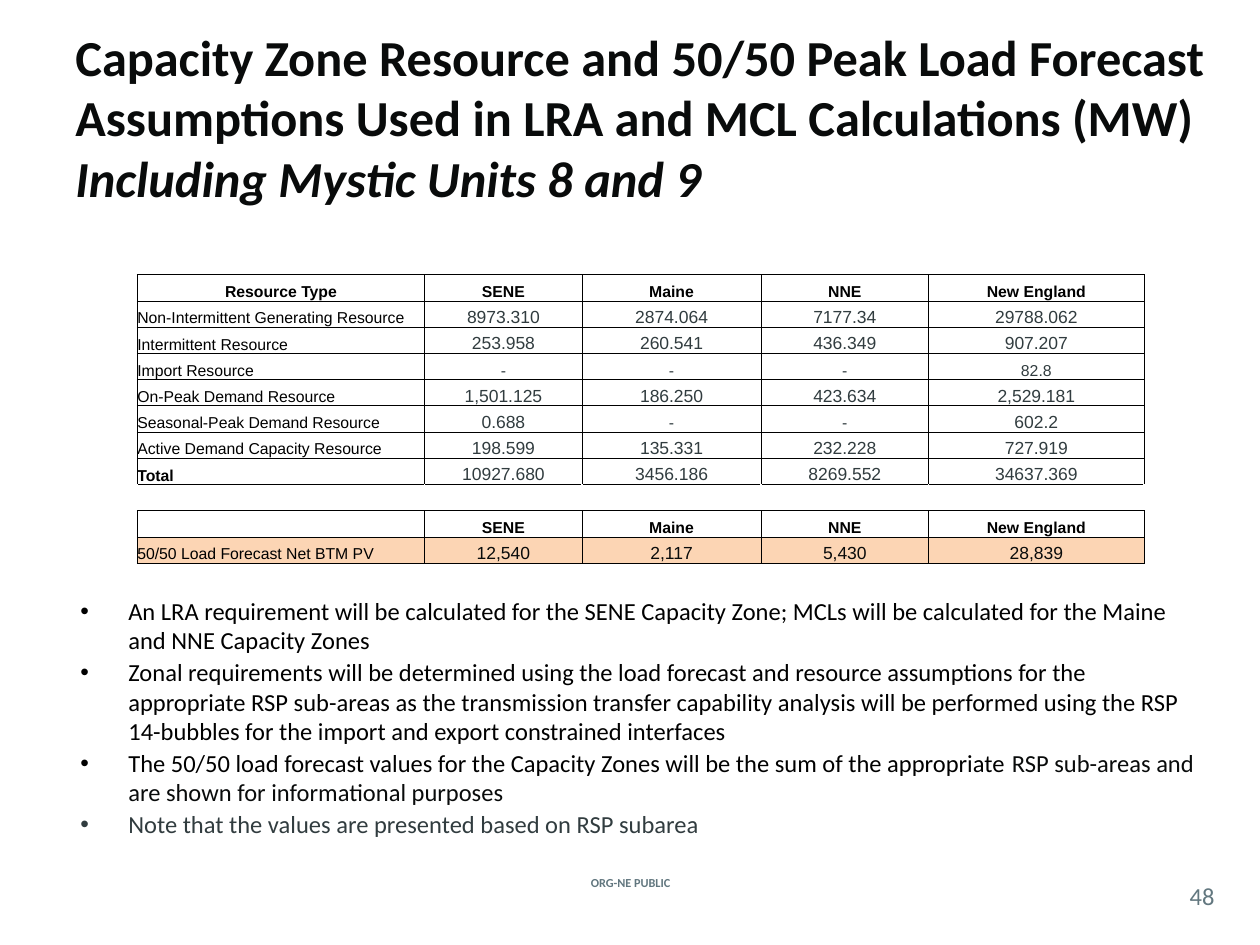
"""Build the capacity zone resource and load forecast slide."""
import pptx
import pptx.dml.color
import pptx.enum.text
import pptx.oxml.ns
import pptx.util
from lxml import etree

Pt = pptx.util.Pt
ALIGN = pptx.enum.text.PP_ALIGN
ANCHOR = pptx.enum.text.MSO_ANCHOR
COLORS = {"black": "000000", "ink": "090B0B", "slate": "313C3F",
          "footer": "62777F", "peach": "FCD5B4"}
ZERO_INSETS = {"margin_left": 0, "margin_right": 0, "margin_top": 0, "margin_bottom": 0}
COLUMN_WIDTHS = [164.16, 90, 102.24, 95.76, 123.12]
ROW_HEIGHT = 15
INDENT = 27.36
ZONES = ["SENE", "Maine", "NNE", "New England"]
ROWS = [
    ["Resource Type", *ZONES],
    ["Non-Intermittent Generating Resource", "8973.310", "2874.064", "7177.34", "29788.062"],
    ["Intermittent Resource", "253.958", "260.541", "436.349", "907.207"],
    ["Import Resource", "-", "-", "-", "82.8"],
    ["On-Peak Demand Resource", "1,501.125", "186.250", "423.634", "2,529.181"],
    ["Seasonal-Peak Demand Resource", "0.688", "-", "-", "602.2"],
    ["Active Demand Capacity Resource", "198.599", "135.331", "232.228", "727.919"],
    ["Total", "10927.680", "3456.186", "8269.552", "34637.369"],
    [""] * 5,
    ["", *ZONES],
    ["50/50 Load Forecast Net BTM PV", "12,540", "2,117", "5,430", "28,839"],
]
HEADER_ROWS, SPACER_ROW, FORECAST_ROW = (0, 9), 8, 10
REQUIREMENTS = [
    [("An LRA requirement will be calculated for the SENE Capacity Zone; MCLs will be "
      "calculated for the Maine and NNE Capacity Zones", "black")],
    [("Zonal requirements will be determined using the load forecast and resource "
      "assumptions for the appropriate RSP sub-areas as the transmission transfer "
      "capability analysis will be performed using the RSP 14-bubbles for the import "
      "and export constrained interfaces", "black")],
    [("The 50/50 load forecast values for the Capacity Zones will be the sum of the "
      "appropriate ", "black"),
     ("RSP sub-areas and are shown for informational purposes", "ink")],
    [("Note that the values are presented based on RSP subarea", "slate")],
]


def apply_format(target, formats):
    """Set every named attribute on the target."""
    for name, value in formats.items():
        setattr(target, name, value)


def add_element(parent, tag, **attributes):
    """Append a drawing element to an XML parent."""
    return etree.SubElement(parent, pptx.oxml.ns.qn(tag), attributes)


def add_run(paragraph, text, size, color, **formats):
    """Append a run with its font settings."""
    run = paragraph.add_run()
    run.text = text
    apply_format(run.font, {"name": "Calibri", "size": Pt(size), **formats})
    run.font.color.rgb = pptx.dml.color.RGBColor.from_string(COLORS[color])


def add_text_frame(slide, left, top, width, height, **formats):
    """Add a wrapping text box and return its frame."""
    frame = slide.shapes.add_textbox(Pt(left), Pt(top), Pt(width), Pt(height)).text_frame
    apply_format(frame, {"word_wrap": True, **formats})
    return frame


def add_title(slide):
    """Add the bold title with its italic last line."""
    frame = add_text_frame(slide, 36, 21.6, 660.24, 90, vertical_anchor=ANCHOR.MIDDLE)
    title = frame.paragraphs[0]
    add_run(title, "Capacity Zone Resource and 50/50 Peak Load Forecast Assumptions "
            "Used in LRA and MCL Calculations (MW)", 28.8, "ink", bold=True)
    title.add_line_break()
    add_run(title, "Including Mystic Units 8 and 9", 28.8, "ink", bold=True, italic=True)


def add_label(slide, box, text, size, **formats):
    """Add a centred footer label."""
    frame = add_text_frame(slide, *box, vertical_anchor=ANCHOR.MIDDLE, **ZERO_INSETS)
    frame.paragraphs[0].alignment = ALIGN.CENTER
    add_run(frame.paragraphs[0], text, size, "footer", **formats)


def add_requirements(slide):
    """Add the bulleted notes on the zonal requirements."""
    frame = add_text_frame(slide, 38.88, 336.96, 653.76, 159.84)
    for index, parts in enumerate(REQUIREMENTS):
        requirement = frame.add_paragraph() if index else frame.paragraphs[0]
        if index:
            requirement.space_before = Pt(1.4)
        properties = requirement._p.get_or_add_pPr()
        properties.set("marL", str(Pt(INDENT)))
        properties.set("indent", str(-Pt(INDENT)))
        add_element(properties, "a:buFont", typeface="Arial")
        add_element(properties, "a:buChar", char="•")
        for text, color in parts:
            add_run(requirement, text, 14, color)


def add_borders(cell, sides):
    """Draw thin black borders on the given sides of a cell."""
    properties = cell._tc.get_or_add_tcPr()
    for side in sides:
        line = add_element(properties, f"a:ln{side}", w=str(Pt(0.5)))
        add_element(add_element(line, "a:solidFill"), "a:srgbClr", val=COLORS["black"])


def cell_style(row, column):
    """Return the size, colour and weight of a table cell."""
    if row in HEADER_ROWS or column == 0:
        return 9, "black", row in HEADER_ROWS or ROWS[row][0] == "Total"
    small = ROWS[row][column] == "-" or ROWS[row][0] == "Import Resource"
    return 9 if small else 10, "ink" if row == FORECAST_ROW else "slate", False


def fill_cell(cell, row, column):
    """Write and format one table cell."""
    apply_format(cell, {"vertical_anchor": ANCHOR.BOTTOM, **ZERO_INSETS})
    add_borders(cell, "TB" if row == SPACER_ROW else "LRTB")
    if row == FORECAST_ROW:
        cell.fill.solid()
        cell.fill.fore_color.rgb = pptx.dml.color.RGBColor.from_string(COLORS["peach"])
    else:
        cell.fill.background()
    entry = cell.text_frame.paragraphs[0]
    entry.alignment = ALIGN.CENTER if column or row in HEADER_ROWS else ALIGN.LEFT
    size, color, bold = cell_style(row, column)
    if ROWS[row][column]:
        add_run(entry, ROWS[row][column], size, color, name="Arial", bold=bold)
    else:
        add_element(entry._p, "a:endParaRPr", sz=str(size * 100))


def add_resource_table(slide):
    """Add the resource table with the load forecast rows below it."""
    resources = slide.shapes.add_table(
        len(ROWS), len(COLUMN_WIDTHS), Pt(78.48), Pt(156.96),
        Pt(sum(COLUMN_WIDTHS)), Pt(ROW_HEIGHT * len(ROWS))).table
    apply_format(resources, {"first_row": False, "horz_banding": False})
    for column, width in zip(resources.columns, COLUMN_WIDTHS):
        column.width = Pt(width)
    for row in range(len(ROWS)):
        resources.rows[row].height = Pt(ROW_HEIGHT)
        for column in range(len(COLUMN_WIDTHS)):
            fill_cell(resources.cell(row, column), row, column)


def main():
    """Build and save the slide."""
    deck = pptx.Presentation()
    apply_format(deck, {"slide_width": Pt(720), "slide_height": Pt(540)})
    slide = deck.slides.add_slide(deck.slide_layouts[6])
    add_label(slide, (307.44, 498.24, 105.84, 12.24), "ORG-NE PUBLIC", 7, bold=True)
    add_label(slide, (671.76, 501.12, 30.24, 20.88), "48", 14)
    add_title(slide)
    add_requirements(slide)
    add_resource_table(slide)
    deck.save("out.pptx")


if __name__ == "__main__":
    main()
